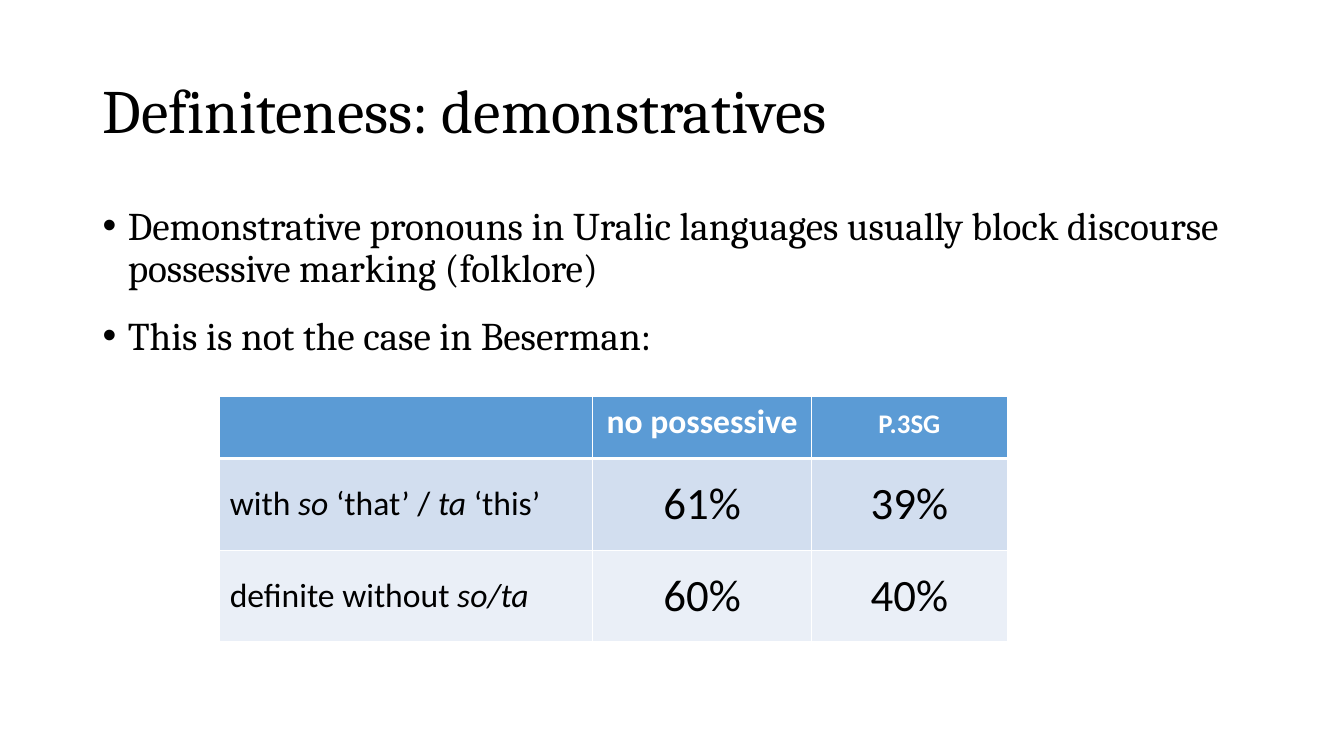
import pptx
import pptx.util
import pptx.dml.color
import pptx.enum.text
import pptx.oxml.ns
import lxml.etree

Inches, Pt = pptx.util.Inches, pptx.util.Pt
RGB = pptx.dml.color.RGBColor.from_string
ALIGN = pptx.enum.text.PP_ALIGN
ANCHOR = pptx.enum.text.MSO_ANCHOR

TITLE = "Definiteness: demonstratives"
POINTS = [
    "Demonstrative pronouns in Uralic languages usually block discourse "
    "possessive marking (folklore)",
    "This is not the case in Beserman:",
]
# Words between asterisks are italic.
HEADER = ["", "no possessive", "p.3sg"]
SHARES = [
    ["with *so* ‘that’ / *ta* ‘this’", "61%", "39%"],
    ["definite without *so/ta*", "60%", "40%"],
]
SMALL_CAPS = {"p.3sg"}

THEME = {
    "text": "000000", "header_text": "FFFFFF", "border": "FFFFFF",
    "header_fill": "5B9BD5", "bands": ["D2DEEF", "EAEFF7"],
    "prose": "Cambria", "cells": "Calibri",
    "title": 44, "body": 28, "label": 24, "share": 32,
}

TITLE_BOX = (0.92, 0.4, 11.5, 1.45)
POINTS_BOX = (0.92, 2, 11.5, 4.76)
TABLE_CORNER = (2.18, 3.93)
COLUMN_WIDTHS = [3.7, 2.17, 1.94]
ROW_HEIGHTS = [0.62, 0.91, 0.91]


def write(paragraph, text, font, size, color, bold=False):
    """Fill a paragraph, turning *marked* words italic."""
    for index, part in enumerate(text.split("*")):
        if not part:
            continue
        run = paragraph.add_run()
        run.text = part
        values = {"name": font, "size": Pt(size), "bold": bold, "italic": index % 2 == 1}
        for key, value in values.items():
            setattr(run.font, key, value)
        run.font.color.rgb = RGB(color)
        if part in SMALL_CAPS:
            run.font._element.set("cap", "small")


def add_prose(slide, box, lines, size, anchor, bulleted=False):
    frame = slide.shapes.add_textbox(*map(Inches, box)).text_frame
    frame.word_wrap = True
    frame.vertical_anchor = anchor
    for index, line in enumerate(lines):
        paragraph = frame.add_paragraph() if index else frame.paragraphs[0]
        paragraph.line_spacing = 0.9
        write(paragraph, line, THEME["prose"], size, THEME["text"])
        if bulleted:
            paragraph.space_before = Pt(18)
            properties = paragraph._p.get_or_add_pPr()
            properties.set("marL", str(Inches(0.25)))
            properties.set("indent", str(Inches(-0.25)))
            for tag, key, value in (("a:buFont", "typeface", "Arial"), ("a:buChar", "char", "•")):
                bullet = lxml.etree.SubElement(properties, pptx.oxml.ns.qn(tag))
                bullet.set(key, value)


def add_borders(cell, widths):
    properties = cell._tc.get_or_add_tcPr()
    for side in "LRTB":
        line = lxml.etree.SubElement(properties, pptx.oxml.ns.qn("a:ln" + side))
        line.set("w", str(Pt(widths.get(side, 1))))
        fill = lxml.etree.SubElement(line, pptx.oxml.ns.qn("a:solidFill"))
        color = lxml.etree.SubElement(fill, pptx.oxml.ns.qn("a:srgbClr"))
        color.set("val", THEME["border"])


def add_share_table(slide):
    rows = [HEADER] + SHARES
    size = (sum(COLUMN_WIDTHS), sum(ROW_HEIGHTS))
    table = slide.shapes.add_table(
        len(rows), len(HEADER), *map(Inches, TABLE_CORNER + size)).table
    for column, width in zip(table.columns, COLUMN_WIDTHS):
        column.width = Inches(width)
    for r, (row, height) in enumerate(zip(rows, ROW_HEIGHTS)):
        table.rows[r].height = Inches(height)
        is_header = r == 0
        for c, text in enumerate(row):
            cell = table.cell(r, c)
            add_borders(cell, {0: {"B": 3}, 1: {"T": 3}}.get(r, {}))
            cell.fill.solid()
            cell.fill.fore_color.rgb = RGB(
                THEME["header_fill"] if is_header else THEME["bands"][r - 1])
            cell.vertical_anchor = ANCHOR.TOP if is_header else ANCHOR.MIDDLE
            paragraph = cell.text_frame.paragraphs[0]
            paragraph.alignment = ALIGN.CENTER if c else ALIGN.LEFT
            write(paragraph, text, THEME["cells"],
                  THEME["label"] if is_header or c == 0 else THEME["share"],
                  THEME["header_text"] if is_header else THEME["text"], bold=is_header)


def main():
    deck = pptx.Presentation()
    deck.slide_width, deck.slide_height = Inches(13.33), Inches(7.5)
    slide = deck.slides.add_slide(deck.slide_layouts[6])
    add_prose(slide, TITLE_BOX, [TITLE], THEME["title"], ANCHOR.MIDDLE)
    add_prose(slide, POINTS_BOX, POINTS, THEME["body"], ANCHOR.TOP, bulleted=True)
    add_share_table(slide)
    deck.save("out.pptx")


if __name__ == "__main__":
    main()
